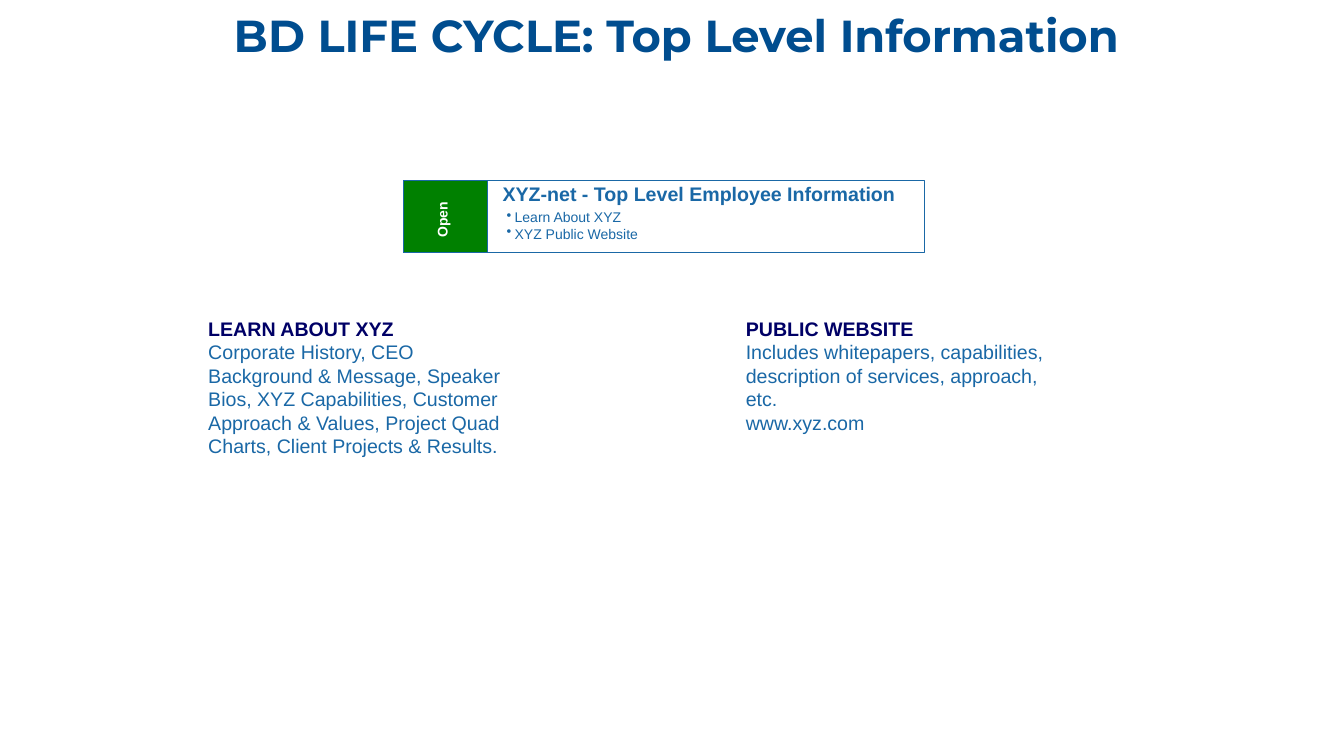
import pptx
import pptx.dml.color
import pptx.enum.shapes
import pptx.oxml.ns
import pptx.util
from dataclasses import dataclass
from lxml import etree

Inches = pptx.util.Inches


@dataclass(frozen=True)
class Theme:
    body_font: str = "Arial"
    title_font: str = "Montserrat"
    title_blue: str = "004D8F"
    blue: str = "1A68A6"
    navy: str = "000066"
    green: str = "008000"
    white: str = "FFFFFF"
    title_size: int = 48
    body_size: int = 21
    small_size: int = 15


THEME = Theme()


def rgb(value):
    return pptx.dml.color.RGBColor.from_string(value)


def add_bullet(paragraph, indent):
    properties = paragraph._p.get_or_add_pPr()
    properties.set("marL", str(Inches(indent)))
    properties.set("indent", str(-Inches(indent)))
    etree.SubElement(properties, pptx.oxml.ns.qn("a:buChar"), char="•")


def write(paragraph, text, *, size=THEME.body_size, color=THEME.blue,
          bold=False, font=THEME.body_font, bullet_indent=None):
    """Fill one paragraph with formatted text."""
    if bullet_indent is not None:
        add_bullet(paragraph, bullet_indent)
    run = paragraph.add_run()
    run.text = text
    run.font.size = pptx.util.Pt(size)
    run.font.name = font
    run.font.bold = bold
    run.font.color.rgb = rgb(color)


def add_text(slide, left, top, width, height, lines, wrap=True, rotation=0):
    """Add a text box; each line is a pair of text and format."""
    box = slide.shapes.add_textbox(
        Inches(left), Inches(top), Inches(width), Inches(height))
    box.rotation = rotation
    frame = box.text_frame
    frame.word_wrap = wrap
    for index, (text, style) in enumerate(lines):
        paragraph = frame.add_paragraph() if index else frame.paragraphs[0]
        write(paragraph, text, **style)


def add_panel(slide, left, top, width, height, fill):
    panel = slide.shapes.add_shape(
        pptx.enum.shapes.MSO_SHAPE.RECTANGLE,
        Inches(left), Inches(top), Inches(width), Inches(height))
    panel.shadow.inherit = False
    panel.fill.solid()
    panel.fill.fore_color.rgb = rgb(fill)
    panel.line.color.rgb = rgb(THEME.blue)
    panel.line.width = pptx.util.Pt(0.75)


def add_topic(slide, left, height, heading, details):
    lines = [(heading, dict(color=THEME.navy, bold=True))]
    lines += [(detail, {}) for detail in details]
    add_text(slide, left, 4.66, 4.88, height, lines)


def add_info_card(slide):
    left, top, height = 6, 2.68, 1.08
    add_panel(slide, left, top, 7.75, height, THEME.white)
    add_text(slide, 7.38, 2.66, 6.11, 0.45,
             [("XYZ-net - Top Level Employee Information", dict(bold=True))],
             wrap=False)
    bullet = dict(size=THEME.small_size, bullet_indent=0.12)
    add_text(slide, 7.44, 3.05, 5.25, 0.61,
             [(item, bullet) for item in ("Learn About XYZ", "XYZ Public Website")])

    # Green tab with sideways label
    add_panel(slide, left, top, 1.25, height, THEME.green)
    add_text(slide, 6.21, 3.09, 0.74, 0.35,
             [("Open", dict(size=THEME.small_size, color=THEME.white, bold=True))],
             wrap=False, rotation=270)


def main():
    deck = pptx.Presentation()
    deck.slide_width, deck.slide_height = Inches(20), Inches(11.25)
    slide = deck.slides.add_slide(deck.slide_layouts[6])

    # Topics below the card
    add_topic(slide, 11, 1.87, "PUBLIC WEBSITE", [
        "Includes whitepapers, capabilities, description of services, approach, etc.",
        "www.xyz.com"])
    add_topic(slide, 3, 2.22, "LEARN ABOUT XYZ", [
        "Corporate History, CEO Background & Message, Speaker Bios, "
        "XYZ Capabilities, Customer Approach & Values, Project Quad Charts, "
        "Client Projects & Results."])

    # Card and title
    add_info_card(slide)
    add_text(slide, 3.38, 0.07, 13.98, 1.72,
             [("BD LIFE CYCLE: Top Level Information",
               dict(size=THEME.title_size, color=THEME.title_blue, bold=True,
                    font=THEME.title_font))])

    deck.save("out.pptx")


if __name__ == "__main__":
    main()
